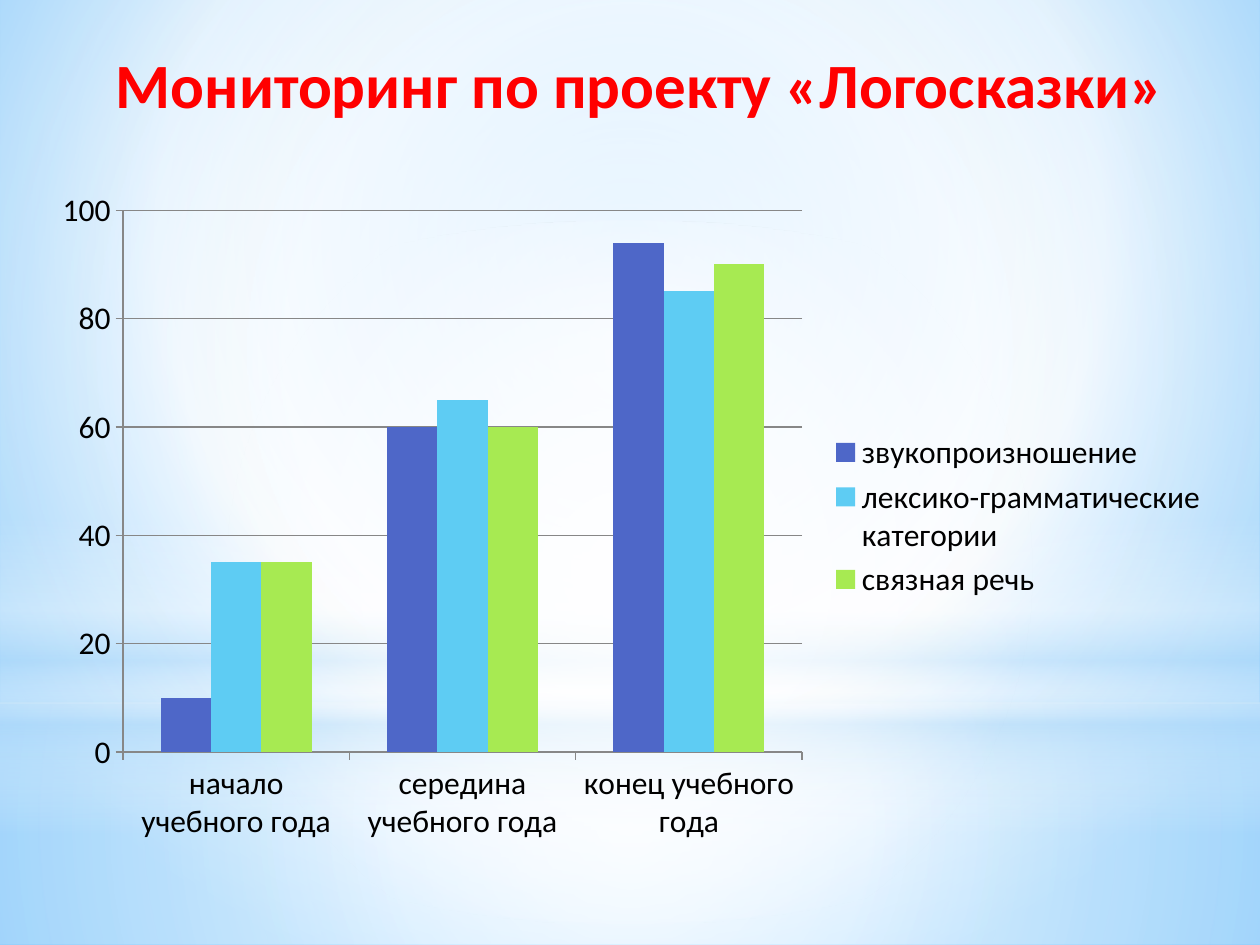
from dataclasses import dataclass

from lxml import etree
from pptx import Presentation
from pptx.chart.data import CategoryChartData
from pptx.dml.color import RGBColor
from pptx.enum.chart import XL_CHART_TYPE, XL_LEGEND_POSITION, XL_TICK_MARK
from pptx.enum.shapes import MSO_SHAPE
from pptx.enum.text import MSO_ANCHOR, PP_ALIGN
from pptx.oxml import parse_xml
from pptx.oxml.ns import nsdecls
from pptx.util import Inches, Pt


@dataclass(frozen=True)
class Theme:
    font: str = "Calibri"
    title_size: int = 36
    chart_size: int = 18
    title: str = "FF0000"
    text: str = "000000"
    grid: str = "878787"
    white: str = "FFFFFF"
    haze: str = "B4DCFA"
    sky: str = "9ED5FF"
    deep_sky: str = "5BB9FF"
    series: tuple = ("4E67C8", "5ECCF3", "A7EA52")


THEME = Theme()
CENTER = (50, 50, 50, 50)


def gradient(stops, focus=None):
    """Stops are (position, colour, opacity) in percent; focus makes it circular."""
    marks = "".join(
        f'<a:gs pos="{pos * 1000}"><a:srgbClr val="{color}">'
        f'<a:alpha val="{opacity * 1000}"/></a:srgbClr></a:gs>'
        for pos, color, opacity in stops
    )
    if focus:
        left, top, right, bottom = (side * 1000 for side in focus)
        course = (f'<a:path path="circle"><a:fillToRect l="{left}" t="{top}" '
                  f'r="{right}" b="{bottom}"/></a:path>')
    else:
        course = '<a:lin ang="5400000" scaled="0"/>'
    return parse_xml(f'<a:gradFill {nsdecls("a")} rotWithShape="1">'
                     f'<a:gsLst>{marks}</a:gsLst>{course}</a:gradFill>')


def set_gradient(fill, holder, new_fill):
    fill.background()
    old_fill = holder.xpath("./a:noFill")[0]
    holder.replace(old_fill, new_fill)


def add_glow(page, kind, box, stops, focus=None):
    glow = page.shapes.add_shape(kind, *map(Inches, box))
    glow.shadow.inherit = False
    set_gradient(glow.fill, glow.element.spPr, gradient(stops, focus))
    glow.line.fill.background()


def add_backdrop(page):
    white, haze = THEME.white, THEME.haze
    fill = page.background.fill
    fill.background()
    holder = page.element.xpath(".//p:bgPr")[0]
    sky = [(0, THEME.sky, 100), (60, white, 100), (100, THEME.deep_sky, 100)]
    set_gradient(fill, holder, gradient(sky, (20, 10, 20, 60)))

    rect, oval = MSO_SHAPE.RECTANGLE, MSO_SHAPE.OVAL
    add_glow(page, rect, (0, 5.58, 10, 1.92),
             [(0, white, 91), (37, white, 76), (100, haze, 79)], CENTER)
    add_glow(page, rect, (0, 0, 10, 5.58),
             [(0, white, 89), (48, white, 62), (100, haze, 79)], CENTER)
    add_glow(page, rect, (0, 4.12, 10, 2.5),
             [(0, white, 0), (29, white, 30), (45, haze, 40),
              (55, white, 26), (65, haze, 60), (100, white, 0)])
    add_glow(page, oval, (0, 1.75, 10, 5.58),
             [(0, white, 100), (56, white, 0)], CENTER)


def style_font(font, size, color, bold=False):
    font.name = THEME.font
    font.size = Pt(size)
    font.bold = bold
    font.color.rgb = RGBColor.from_string(color)


def add_title(page, box, text):
    frame = page.shapes.add_textbox(*map(Inches, box)).text_frame
    frame.word_wrap = True
    frame.vertical_anchor = MSO_ANCHOR.TOP
    frame.text = text
    para = frame.paragraphs[0]
    para.alignment = PP_ALIGN.CENTER
    style_font(para.runs[0].font, THEME.title_size, THEME.title, bold=True)


def style_line(line):
    line.color.rgb = RGBColor.from_string(THEME.grid)
    line.width = Pt(0.75)


def add_progress_chart(page, box, categories, results):
    data = CategoryChartData()
    data.categories = categories
    for name, values in results.items():
        data.add_series(name, values)
    chart = page.shapes.add_chart(
        XL_CHART_TYPE.COLUMN_CLUSTERED, *map(Inches, box), data).chart
    style_font(chart.font, THEME.chart_size, THEME.text)
    chart.has_title = False
    chart.has_legend = True
    chart.legend.position = XL_LEGEND_POSITION.RIGHT
    chart.legend.include_in_layout = False

    for axis in (chart.category_axis, chart.value_axis):
        axis.major_tick_mark = XL_TICK_MARK.OUTSIDE
        axis.minor_tick_mark = XL_TICK_MARK.NONE
        style_line(axis.format.line)
    scale = chart.value_axis
    scale.minimum_scale, scale.maximum_scale, scale.major_unit = 0, 100, 20
    scale.has_major_gridlines = True
    style_line(scale.major_gridlines.format.line)

    plot = chart.plots[0]
    plot.gap_width = 150
    plot.overlap = 0
    plot.vary_by_categories = False
    for series, color in zip(plot.series, THEME.series):
        series.format.fill.solid()
        series.format.fill.fore_color.rgb = RGBColor.from_string(color)


def main():
    deck = Presentation()
    deck.slide_width, deck.slide_height = Inches(10), Inches(7.5)
    page = deck.slides.add_slide(deck.slide_layouts[6])
    add_backdrop(page)
    add_title(page, (0.47, 0.31, 9.22, 1.72), "Мониторинг по проекту «Логосказки»")
    add_progress_chart(
        page, (0.31, 1.41, 9.38, 5.37),
        ["начало учебного года", "середина учебного года", "конец учебного года"],
        {
            "звукопроизношение": (10, 60, 94),
            "лексико-грамматические категории": (35, 65, 85),
            "связная речь": (35, 60, 90),
        },
    )
    deck.save("out.pptx")


if __name__ == "__main__":
    main()
